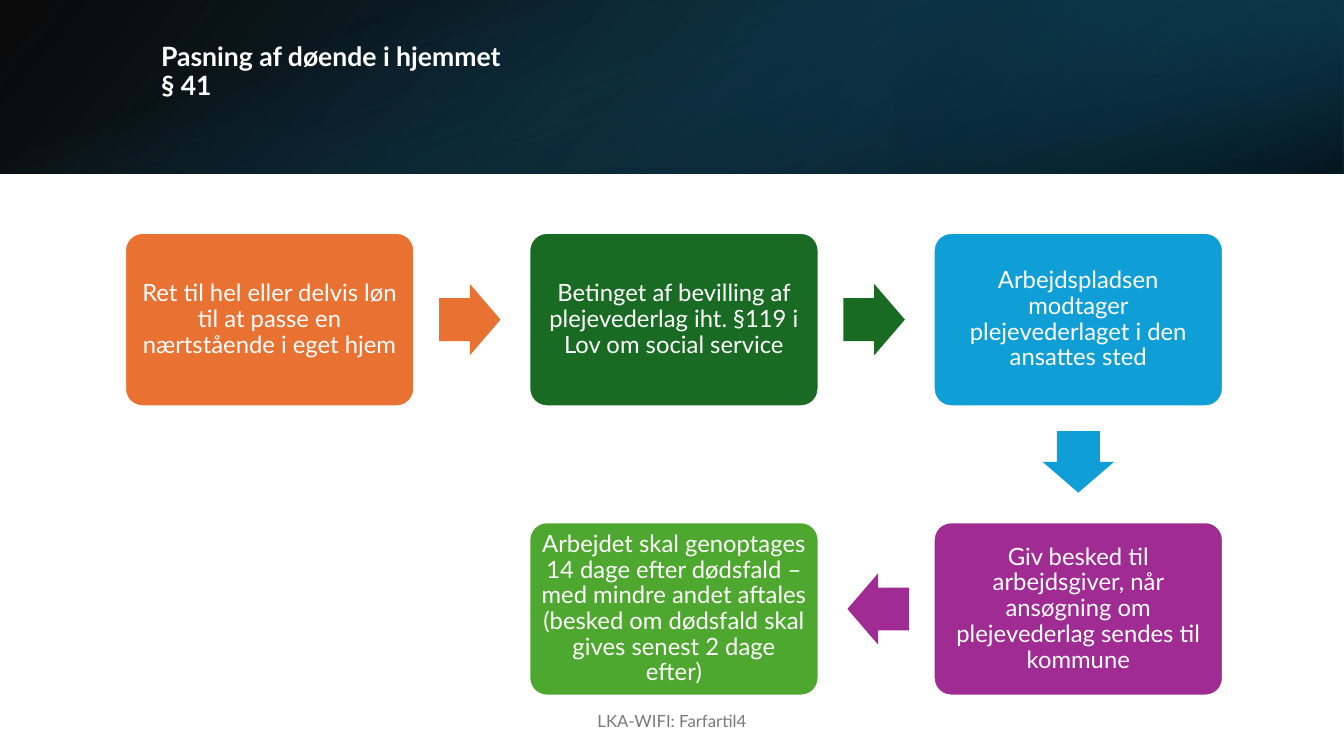
from dataclasses import dataclass
from math import atan2, degrees

from pptx import Presentation
from pptx.dml.color import RGBColor
from pptx.enum.shapes import MSO_SHAPE
from pptx.enum.text import MSO_ANCHOR, PP_ALIGN
from pptx.oxml.ns import qn
from pptx.util import Cm, Pt
from lxml.etree import SubElement


@dataclass(frozen=True)
class Theme:
    """Colours, font and type sizes of the slide."""
    font: str = "Lato"
    white: str = "FFFFFF"
    black: str = "000000"
    teal: str = "156082"
    blue_teal: str = "104862"
    deep_teal: str = "0B3041"
    orange: str = "E97132"
    dark_green: str = "196B24"
    blue: str = "0F9ED5"
    purple: str = "A02B93"
    light_green: str = "4EA72E"
    grey: str = "797979"
    title_size: int = 19
    step_size: int = 17
    footer_size: int = 12


THEME = Theme()
SLIDE_WIDTH, SLIDE_HEIGHT = 33.87, 19.05
HEADER_HEIGHT = 4.37
GRID_LEFT, GRID_TOP = 3.15, 5.87
COLUMN_STEP, ROW_STEP = 10.19, 7.29
STEP_WIDTH, STEP_HEIGHT = 7.29, 4.37
ARROW_LENGTH, ARROW_WIDTH = 1.55, 1.8
ARROW_OFFSET = 1.4

STEPS = [
    (0, 0, THEME.orange,
     "Ret til hel eller delvis løn til at passe en nærtstående i eget hjem"),
    (1, 0, THEME.dark_green,
     "Betinget af bevilling af plejevederlag iht. §119 i Lov om social service"),
    (2, 0, THEME.blue,
     "Arbejdspladsen modtager plejevederlaget i den ansattes sted"),
    (2, 1, THEME.purple,
     "Giv besked til arbejdsgiver, når ansøgning om plejevederlag sendes til kommune"),
    (1, 1, THEME.light_green,
     "Arbejdet skal genoptages 14 dage efter dødsfald – med mindre andet aftales "
     "(besked om dødsfald skal gives senest 2 dage efter)"),
]


def add_box(shapes, kind, left, top, width, height):
    """Add a preset shape without shadow or outline."""
    box = shapes.add_shape(kind, Cm(left), Cm(top), Cm(width), Cm(height))
    box.shadow.inherit = False
    box.line.fill.background()
    return box


def add_gradient_layer(shapes, frame, stops, angle, rotation=0, flipped=False):
    """Add a rectangle whose gradient stops are (position, colour, opacity)."""
    layer = add_box(shapes, MSO_SHAPE.RECTANGLE, *frame)
    layer.rotation = rotation
    if flipped:
        layer._element.spPr.find(qn("a:xfrm")).set("flipH", "1")
    layer.fill.gradient()
    layer.fill.gradient_angle = 360 - angle
    for stop, (position, colour, _) in zip(layer.fill.gradient_stops, stops):
        stop.position = position
        stop.color.rgb = RGBColor.from_string(colour)
    colours = list(layer._element.spPr.iter(qn("a:srgbClr")))
    for colour, (_, _, opacity) in zip(colours, stops):
        SubElement(colour, qn("a:alpha")).set("val", str(opacity * 1000))


def write_lines(frame, lines, size, colour, align, bold=False, spacing=None):
    """Fill a text frame with one paragraph of lines parted by line breaks."""
    frame.word_wrap = True
    paragraph = frame.paragraphs[0]
    paragraph.alignment = align
    paragraph.line_spacing = spacing
    for index, line in enumerate(lines):
        if index:
            paragraph.add_line_break()
        run = paragraph.add_run()
        run.text = line
        run.font.name = THEME.font
        run.font.size = Pt(size)
        run.font.bold = bold
        run.font.color.rgb = RGBColor.from_string(colour)


def add_label(shapes, frame, anchor, *text, **style):
    """Add a text box with the given anchor and text."""
    label = shapes.add_textbox(*(Cm(length) for length in frame)).text_frame
    label.vertical_anchor = anchor
    write_lines(label, *text, **style)


def add_step(shapes, column, row, colour, text):
    """Add one rounded step of the process at its grid cell."""
    step = add_box(shapes, MSO_SHAPE.ROUNDED_RECTANGLE,
                   GRID_LEFT + column * COLUMN_STEP, GRID_TOP + row * ROW_STEP,
                   STEP_WIDTH, STEP_HEIGHT)
    step.adjustments[0] = 0.1
    step.fill.solid()
    step.fill.fore_color.rgb = RGBColor.from_string(colour)
    step.line.color.rgb = RGBColor.from_string(THEME.white)
    step.line.width = Pt(1.5)
    frame = step.text_frame
    frame.vertical_anchor = MSO_ANCHOR.MIDDLE
    frame.margin_left = frame.margin_right = Cm(0.18)
    frame.margin_top = frame.margin_bottom = Cm(0.18)
    write_lines(frame, [text], THEME.step_size, THEME.white, PP_ALIGN.CENTER, spacing=0.9)


def add_arrow(shapes, start, end):
    """Add the arrow that leaves one step towards the next."""
    column, row, colour, _ = start
    across, down = end[0] - column, end[1] - row
    center_x = (GRID_LEFT + column * COLUMN_STEP + STEP_WIDTH / 2
                + across * (STEP_WIDTH / 2 + ARROW_OFFSET))
    center_y = (GRID_TOP + row * ROW_STEP + STEP_HEIGHT / 2
                + down * (STEP_HEIGHT / 2 + ARROW_OFFSET))
    arrow = add_box(shapes, MSO_SHAPE.RIGHT_ARROW, center_x - ARROW_LENGTH / 2,
                    center_y - ARROW_WIDTH / 2, ARROW_LENGTH, ARROW_WIDTH)
    arrow.rotation = degrees(atan2(down, across))
    arrow.adjustments[0] = 0.6
    arrow.adjustments[1] = 0.5
    arrow.fill.solid()
    arrow.fill.fore_color.rgb = RGBColor.from_string(colour)


def add_header(shapes):
    """Add the layered dark band and the title."""
    add_gradient_layer(shapes, (0, 0, SLIDE_WIDTH, HEADER_HEIGHT),
                       [(0, THEME.black, 96), (1, THEME.blue_teal, 100)],
                       140, flipped=True)
    add_gradient_layer(shapes, (22.58, 0, SLIDE_WIDTH - 22.58, HEADER_HEIGHT),
                       [(0.19, THEME.deep_teal, 68), (1, THEME.teal, 79)],
                       320, rotation=180, flipped=True)
    inset = (SLIDE_WIDTH - HEADER_HEIGHT) / 2
    add_gradient_layer(shapes, (inset, -inset, HEADER_HEIGHT, SLIDE_WIDTH),
                       [(0.23, THEME.teal, 0), (0.99, THEME.black, 74)],
                       340, rotation=90)
    add_label(shapes, (3.81, 0.97, 27.89, 2.44), MSO_ANCHOR.TOP,
              ["Pasning af døende i hjemmet", "§ 41"], THEME.title_size,
              THEME.white, PP_ALIGN.LEFT, bold=True, spacing=0.9)


def main():
    """Build the slide and save it."""
    presentation = Presentation()
    presentation.slide_width = Cm(SLIDE_WIDTH)
    presentation.slide_height = Cm(SLIDE_HEIGHT)
    shapes = presentation.slides.add_slide(presentation.slide_layouts[6]).shapes
    add_header(shapes)
    process = shapes.add_group_shape().shapes
    for step in STEPS:
        add_step(process, *step)
    for start, end in zip(STEPS, STEPS[1:]):
        add_arrow(process, start, end)
    add_label(shapes, (11.22, 17.66, 11.43, 1.01), MSO_ANCHOR.MIDDLE,
              ["LKA-WIFI: Farfartil4"], THEME.footer_size, THEME.grey, PP_ALIGN.CENTER)
    presentation.save("out.pptx")


if __name__ == "__main__":
    main()
